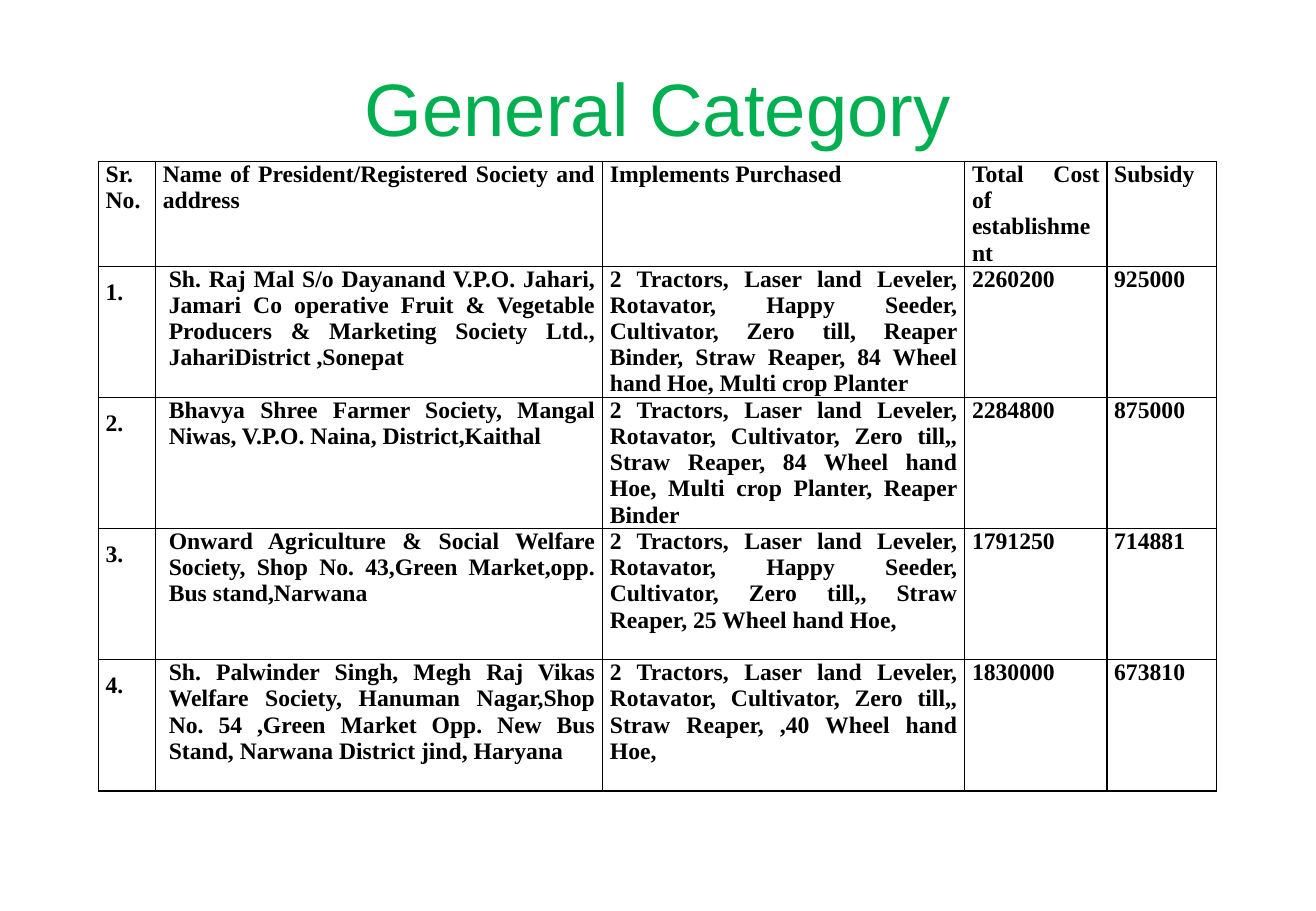
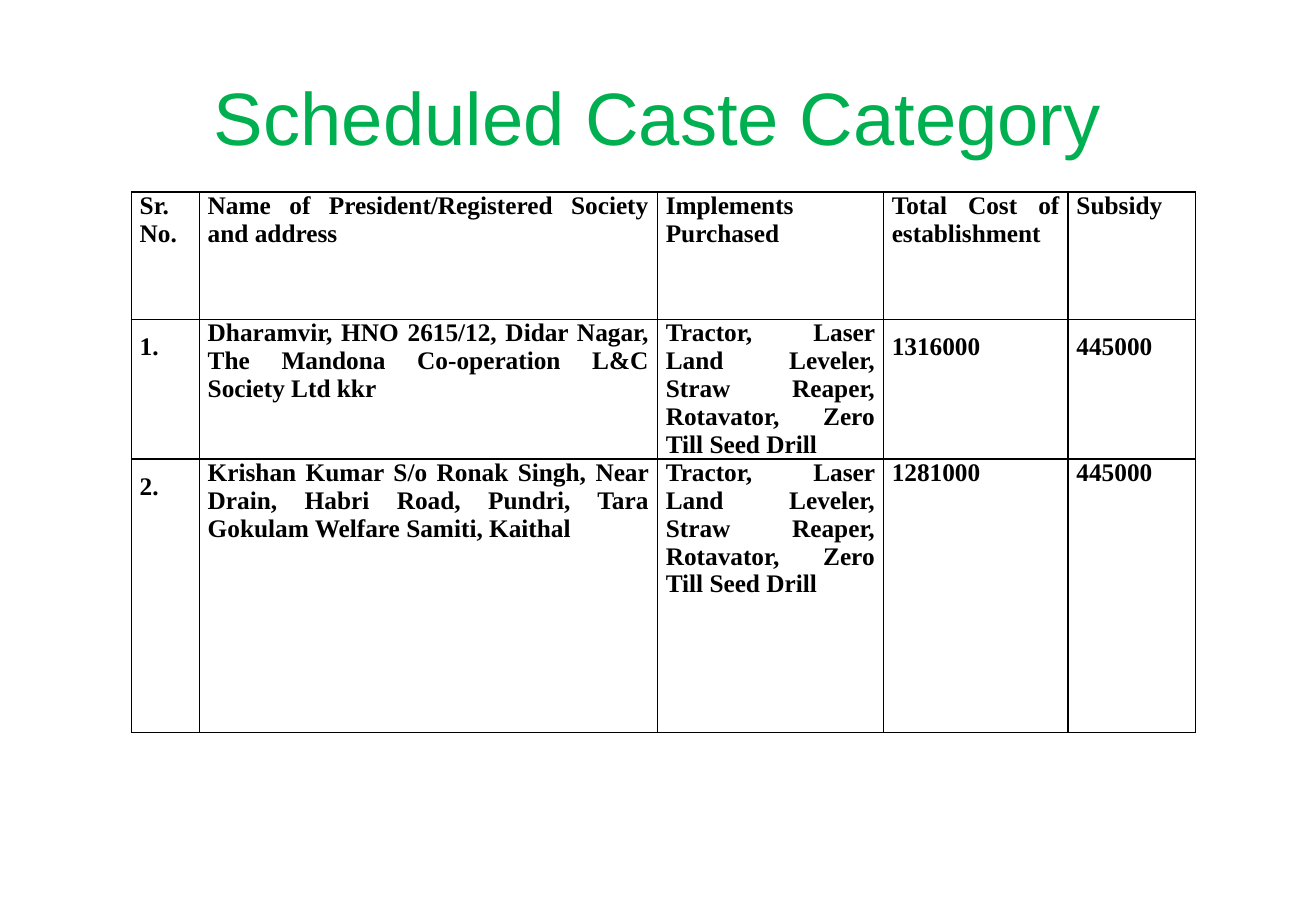
from dataclasses import dataclass

from lxml.etree import SubElement
from pptx import Presentation
from pptx.dml.color import RGBColor
from pptx.enum.text import MSO_ANCHOR, PP_ALIGN
from pptx.oxml import parse_xml
from pptx.oxml.ns import nsdecls, qn
from pptx.util import Inches, Pt


@dataclass(frozen=True)
class Theme:
    green: str = "00B050"
    black: str = "000000"
    title_font: str = "Arial"
    table_font: str = "Times New Roman"
    title_size: int = 44
    border: int = 1


HEADER = ["Sr. No.", "Name of President/Registered Society and address",
          "Implements Purchased", "Total Cost of establishment", "Subsidy"]

GENERAL = [
    ["1.", "Sh. Raj Mal S/o Dayanand V.P.O. Jahari, Jamari Co operative Fruit & Vegetable "
     "Producers & Marketing Society Ltd., JahariDistrict ,Sonepat",
     "2 Tractors, Laser land Leveler, Rotavator, Happy Seeder, Cultivator, Zero till, "
     "Reaper Binder, Straw Reaper, 84 Wheel hand Hoe, Multi crop Planter",
     "2260200", "925000"],
    ["2.", "Bhavya Shree Farmer Society, Mangal Niwas, V.P.O. Naina, District,Kaithal",
     "2 Tractors, Laser land Leveler, Rotavator, Cultivator, Zero till,, Straw Reaper, "
     "84 Wheel hand Hoe, Multi crop Planter, Reaper Binder",
     "2284800", "875000"],
    ["3.", "Onward Agriculture & Social Welfare Society, Shop No. 43,Green Market,opp. "
     "Bus stand,Narwana",
     "2 Tractors, Laser land Leveler, Rotavator, Happy Seeder, Cultivator, Zero till,, "
     "Straw Reaper, 25 Wheel hand Hoe,",
     "1791250", "714881"],
    ["4.", "Sh. Palwinder Singh, Megh Raj Vikas Welfare Society, Hanuman Nagar,Shop No. 54 "
     ",Green Market Opp. New Bus Stand, Narwana District jind, Haryana",
     "2 Tractors, Laser land Leveler, Rotavator, Cultivator, Zero till,, Straw Reaper, "
     ",40 Wheel hand Hoe,",
     "1830000", "673810"],
]

SEED_DRILL_SET = ("Tractor, Laser Land Leveler, Straw Reaper, Rotavator, "
                  "Zero Till Seed Drill")
SCHEDULED_CASTE = [
    ["1.", "Dharamvir, HNO 2615/12, Didar Nagar, The Mandona Co-operation L&C Society Ltd kkr",
     SEED_DRILL_SET, "1316000", "445000"],
    ["2.", "Krishan Kumar S/o Ronak Singh, Near Drain, Habri Road, Pundri, "
     "Tara Gokulam Welfare Samiti, Kaithal",
     SEED_DRILL_SET, "1281000", "445000"],
]


class Deck:
    def __init__(self, theme):
        self.theme = theme
        self.prs = Presentation()
        self.prs.slide_width, self.prs.slide_height = Inches(10.83), Inches(7.5)
        self.s = None

    def add_slide(self):
        self.s = self.prs.slides.add_slide(self.prs.slide_layouts[6])

    def style(self, p, font, size, color, align, bold=False):
        p.alignment = align
        for r in p.runs:
            r.font.name, r.font.size, r.font.bold = font, Pt(size), bold
            r.font.color.rgb = RGBColor.from_string(color)
        # The paragraph end takes the same type, so it adds no height
        end = SubElement(p._p, qn("a:endParaRPr"), sz=str(size * 100), b=str(int(bold)))
        SubElement(end, qn("a:latin"), typeface=font)

    def title(self, text, top):
        sp = self.s.shapes.add_textbox(Inches(0.54), Inches(top), Inches(9.75), Inches(1.25))
        tf = sp.text_frame
        tf.word_wrap = True
        tf.vertical_anchor = MSO_ANCHOR.MIDDLE
        tf.text = text
        t = self.theme
        self.style(tf.paragraphs[0], t.title_font, t.title_size, t.green, PP_ALIGN.CENTER)

    def borders(self, cell):
        # Border lines come before the fill in the cell properties
        tcPr = cell._tc.get_or_add_tcPr()
        for i, side in enumerate(("lnL", "lnR", "lnT", "lnB")):
            ln = parse_xml(f'<a:{side} {nsdecls("a")} w="{Pt(self.theme.border)}"/>')
            fill = SubElement(ln, qn("a:solidFill"))
            SubElement(fill, qn("a:srgbClr"), val=self.theme.black)
            tcPr.insert(i, ln)

    def table(self, left, top, cols, heights, rows, size, leading, inset, spaced,
              name_indent=0):
        """spaced holds the (row, column) cells set at one and a half lines."""
        t = self.theme
        rows = [HEADER] + rows
        tbl = self.s.shapes.add_table(len(rows), len(cols), Inches(left), Inches(top),
                                      Inches(sum(cols)), Inches(sum(heights))).table
        for col, width in zip(tbl.columns, cols):
            col.width = Inches(width)
        for i, (row, height) in enumerate(zip(rows, heights)):
            tbl.rows[i].height = Inches(height)
            for j, text in enumerate(row):
                cell = tbl.cell(i, j)
                cell.fill.background()
                cell.margin_left = cell.margin_right = Inches(inset)
                cell.margin_top = cell.margin_bottom = 0
                cell.text_frame.text = text
                p = cell.text_frame.paragraphs[0]
                self.style(p, t.table_font, size, t.black, PP_ALIGN.JUSTIFY, bold=True)
                p.line_spacing = 1.5 if (i, j) in spaced else Pt(leading)
                if i and j == 1 and name_indent:
                    p._p.get_or_add_pPr().set("marL", str(Inches(name_indent)))
                self.borders(cell)


def main():
    deck = Deck(Theme())

    # General category
    deck.add_slide()
    deck.title("General Category", 0.25)
    deck.table(0.81, 1.33, [0.47, 3.68, 2.98, 1.17, 0.9], [0.86] + [1.08] * 4, GENERAL,
               size=14, leading=15.5, inset=0.06,
               spaced={(i, 0) for i in range(1, 5)}, name_indent=0.05)

    # Scheduled caste category
    deck.add_slide()
    deck.title("Scheduled Caste Category", 0.33)
    deck.table(1.08, 1.58, [0.56, 3.77, 1.86, 1.52, 1.05], [1.05, 1.15, 2.25],
               SCHEDULED_CASTE, size=15, leading=16.5, inset=0.07,
               spaced={(1, 0), (2, 0), (1, 3), (1, 4)})

    deck.prs.save("out.pptx")


if __name__ == "__main__":
    main()
